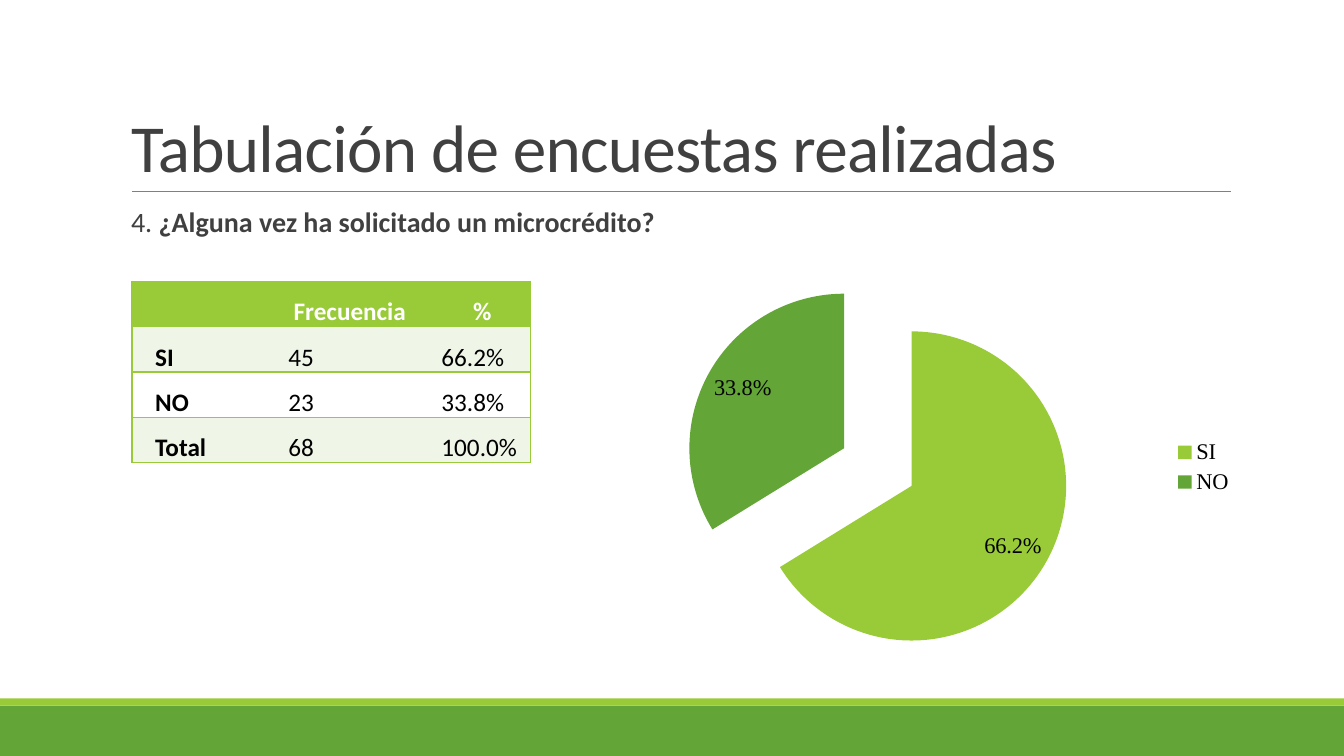
from lxml import etree
from pptx import Presentation
from pptx.chart.data import CategoryChartData
from pptx.dml.color import RGBColor
from pptx.enum import chart as ch, shapes, text
from pptx.oxml import ns
from pptx.util import Inches, Pt

LIME = RGBColor(0x99, 0xCB, 0x38)
GREEN = RGBColor(0x63, 0xA5, 0x37)
PALE = RGBColor(0xEF, 0xF6, 0xE8)
WHITE = RGBColor(0xFF, 0xFF, 0xFF)
BLACK = RGBColor(0, 0, 0)
DARK = RGBColor(0x40, 0x40, 0x40)
GRAY = RGBColor(0x80, 0x80, 0x80)
PLAIN_TABLE = "{2D5ABB26-0587-4C30-8999-92F81FD0307C}"

ROWS = [
    ("", "Frecuencia", "%"),
    ("SI", "45", "66.2%"),
    ("NO", "23", "33.8%"),
    ("Total", "68", "100.0%"),
]


def add_run(paragraph, words, size, color, bold=False):
    run = paragraph.add_run()
    run.text = words
    run.font.name = "Calibri"
    run.font.size = Pt(size)
    run.font.bold = bold
    run.font.color.rgb = color
    return run


def add_band(slide, top, height, color):
    band = slide.shapes.add_shape(
        shapes.MSO_SHAPE.RECTANGLE, 0, Inches(top), Inches(13.33), Inches(height))
    band.shadow.inherit = False
    band.fill.solid()
    band.fill.fore_color.rgb = color
    band.line.fill.background()


def add_rule(slide):
    rule = slide.shapes.add_connector(
        shapes.MSO_CONNECTOR.STRAIGHT, Inches(1.31), Inches(1.9), Inches(12.21), Inches(1.9))
    rule.line.color.rgb = GRAY
    rule.line.width = Pt(0.5)
    etree.SubElement(rule._element.spPr, ns.qn("a:effectLst"))


def set_title(slide, words):
    title = slide.shapes.title
    title.left, title.top = Inches(1.2), Inches(0.31)
    title.width, title.height = Inches(11), Inches(1.59)
    frame = title.text_frame
    frame.vertical_anchor = text.MSO_ANCHOR.BOTTOM
    frame.auto_size = text.MSO_AUTO_SIZE.NONE
    heading = frame.paragraphs[0]
    heading.alignment = text.PP_ALIGN.LEFT
    heading.line_spacing = 0.85
    run = add_run(heading, words, 48, DARK)
    run.font._element.set("spc", "-50")


def add_question(slide, number, words):
    frame = slide.shapes.add_textbox(
        Inches(1.2), Inches(2.02), Inches(11), Inches(4.4)).text_frame
    frame.word_wrap = True
    frame.margin_left = frame.margin_right = 0
    question = frame.paragraphs[0]
    question.line_spacing = 0.9
    question.space_before, question.space_after = Pt(12), Pt(2)
    question._p.get_or_add_pPr().set("marL", str(Inches(0.1)))
    add_run(question, number, 20, DARK)
    add_run(question, words, 20, DARK, True)


def add_border(cell, side):
    border = etree.SubElement(
        cell._tc.get_or_add_tcPr(), ns.qn(f"a:ln{side}"), w=str(Pt(1)))
    fill = etree.SubElement(border, ns.qn("a:solidFill"))
    etree.SubElement(fill, ns.qn("a:srgbClr"), val=str(LIME))


def fill_cell(cell, words, row, column):
    heading = row == 0
    sides = {0: "LTB", 1: "TB", 2: "RTB"}[column]
    for side in sides:
        add_border(cell, side)
    cell.fill.solid()
    cell.fill.fore_color.rgb = LIME if heading else (PALE if row % 2 else WHITE)
    cell.margin_left = cell.margin_right = Inches(0.07)
    cell.margin_top = cell.margin_bottom = 0
    entry = cell.text_frame.paragraphs[0]
    entry.alignment = text.PP_ALIGN.CENTER if heading else text.PP_ALIGN.JUSTIFY
    entry.line_spacing = 1.5
    entry._p.get_or_add_pPr().set("indent", str(Inches(0.16)))
    if words:
        add_run(entry, words, 18, WHITE if heading else BLACK, heading or column == 0)


def add_frequencies(slide):
    table = slide.shapes.add_table(
        len(ROWS), 3, Inches(1.31), Inches(2.79), Inches(3.95), Inches(1.8)).table
    table.first_row = table.horz_banding = False
    table._tbl.tblPr.find(ns.qn("a:tableStyleId")).text = PLAIN_TABLE
    for column, width in zip(table.columns, (1.32, 1.52, 1.11)):
        column.width = Inches(width)
    for r, entries in enumerate(ROWS):
        table.rows[r].height = Inches(0.44)
        for c, words in enumerate(entries):
            fill_cell(table.cell(r, c), words, r, c)


def style_font(font, size):
    font.name = "Times New Roman"
    font.size = Pt(size)
    font.color.rgb = BLACK


def add_answer_pie(slide):
    answers = CategoryChartData(number_format="0.0%")
    answers.categories = ["SI", "NO"]
    answers.add_series("Series 1", (0.662, 0.338))
    pie = slide.shapes.add_chart(
        ch.XL_CHART_TYPE.PIE, Inches(5.8), Inches(2.58), Inches(6.54), Inches(4.11),
        answers).chart
    style_font(pie.font, 10)
    pie.has_title = False
    pie.has_legend = True
    pie.legend.position = ch.XL_LEGEND_POSITION.RIGHT
    pie.legend.include_in_layout = False
    style_font(pie.legend.font, 16)
    plot = pie.plots[0]
    plot.vary_by_categories = True
    series = plot.series[0]
    explosion = etree.Element(ns.qn("c:explosion"), val="25")
    series._element.find(ns.qn("c:tx")).addnext(explosion)
    for i, color in enumerate((LIME, GREEN)):
        slice_fill = series.points[i].format.fill
        slice_fill.solid()
        slice_fill.fore_color.rgb = color
    labels = series.data_labels
    labels.show_value = True
    labels.number_format = "0.0%"
    labels.number_format_is_linked = False
    labels.position = ch.XL_LABEL_POSITION.INSIDE_END
    style_font(labels.font, 16)


def main():
    deck = Presentation()
    deck.slide_width, deck.slide_height = Inches(13.33), Inches(7.5)
    slide = deck.slides.add_slide(deck.slide_layouts[5])
    add_band(slide, 7, 0.5, GREEN)
    add_band(slide, 6.93, 0.07, LIME)
    add_rule(slide)
    set_title(slide, "Tabulación de encuestas realizadas")
    add_question(slide, "4. ", "¿Alguna vez ha solicitado un microcrédito?")
    add_frequencies(slide)
    add_answer_pie(slide)
    deck.save("out.pptx")


if __name__ == "__main__":
    main()
